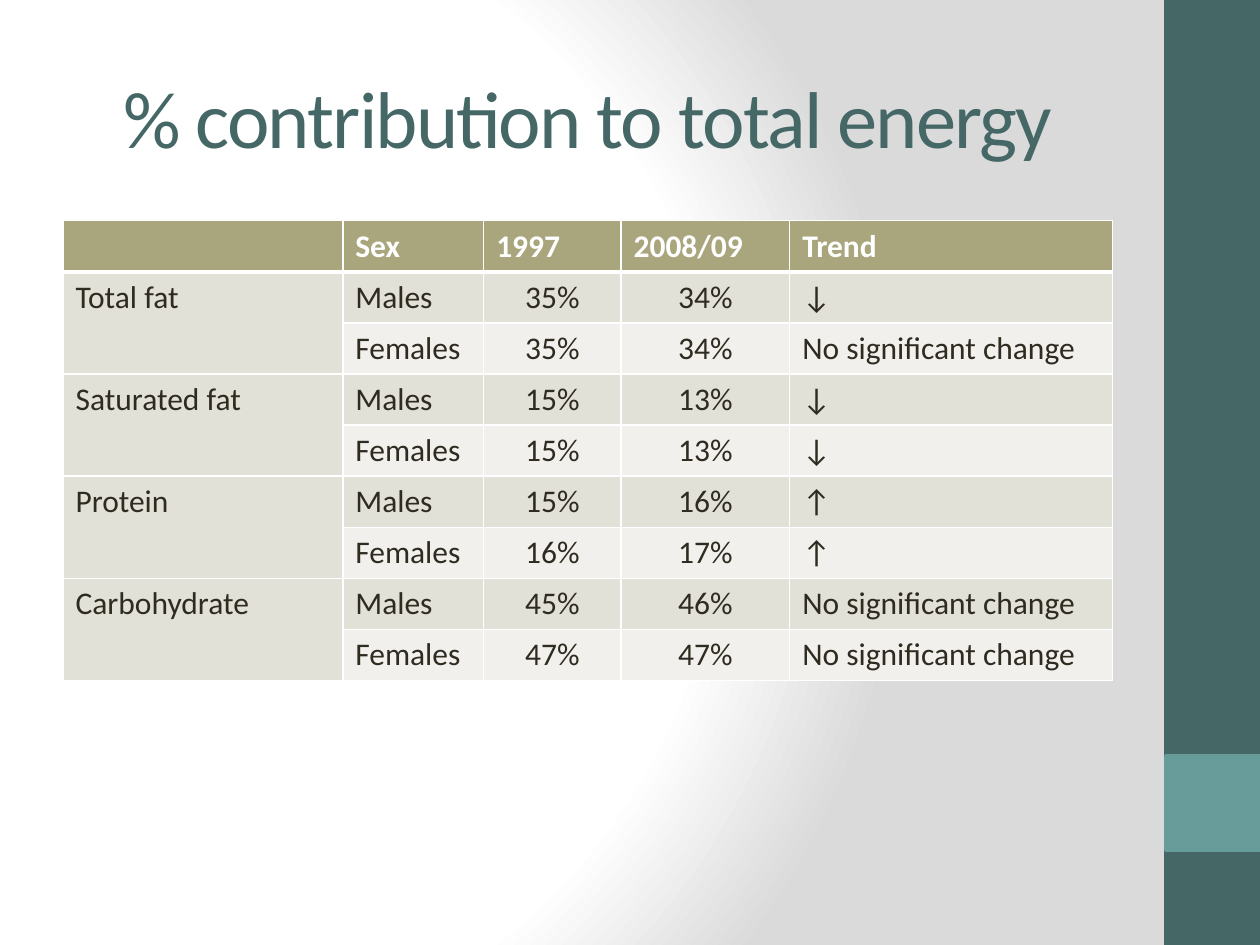
from dataclasses import dataclass

from pptx import Presentation
from pptx.dml.color import RGBColor
from pptx.enum.shapes import MSO_SHAPE
from pptx.enum.text import MSO_ANCHOR, PP_ALIGN
from pptx.oxml import parse_xml
from pptx.oxml.ns import nsdecls, qn
from pptx.slide import Slide
from pptx.table import _Cell as Cell
from pptx.text.text import TextFrame
from pptx.util import Cm, Pt


@dataclass(frozen=True)
class Theme:
    font: str = "Calibri"
    white: str = "FFFFFF"
    grey: str = "DADADA"
    teal: str = "456867"
    light: str = "689C9A"
    head: str = "A9A57C"
    odd: str = "E2E1D7"
    even: str = "F1F0EC"
    ink: str = "2F2B20"
    title: int = 46
    body: int = 18


@dataclass(frozen=True)
class Bar:
    top: float
    height: float
    color: str


@dataclass(frozen=True)
class Entry:
    sex: str
    first: str
    last: str
    trend: str


THEME = Theme()
BARS = [Bar(0, 19.05, THEME.teal), Bar(15.24, 1.9, THEME.light)]
HEADS = ["", "Sex", "1997", "2008/09", "Trend"]
WIDTHS = [5.64, 2.84, 2.77, 3.4, 6.51]
ROW = 1.03
SAME = "No significant change"
GROUPS = {
    "Total fat": [Entry("Males", "35%", "34%", "↓"),
                  Entry("Females", "35%", "34%", SAME)],
    "Saturated fat": [Entry("Males", "15%", "13%", "↓"),
                      Entry("Females", "15%", "13%", "↓")],
    "Protein": [Entry("Males", "15%", "16%", "↑"),
                Entry("Females", "16%", "17%", "↑")],
    "Carbohydrate": [Entry("Males", "45%", "46%", SAME),
                     Entry("Females", "47%", "47%", SAME)],
}


def write(frame: TextFrame, text: str, *, size: int = THEME.body,
          color: str = THEME.ink, bold: bool = False,
          align: PP_ALIGN = PP_ALIGN.LEFT, space: int = 0) -> None:
    para = frame.paragraphs[0]
    para.alignment = align
    run = para.add_run()
    run.text = text
    font = run.font
    font.name, font.size, font.bold = THEME.font, Pt(size), bold
    font.color.rgb = RGBColor.from_string(color)
    if space:
        run._r.get_or_add_rPr().set("spc", str(space * 100))


def paint(slide: Slide) -> None:
    """Fill the background with a round gradient."""
    slide.background.fill.solid()
    flat = slide.element.find(".//" + qn("p:bgPr")).find(qn("a:solidFill"))
    stops = [(0, THEME.white), (75, THEME.white), (100, THEME.grey)]
    marks = "".join(f'<a:gs pos="{pos * 1000}"><a:srgbClr val="{color}"/></a:gs>'
                    for pos, color in stops)
    flat.getparent().replace(flat, parse_xml(
        f'<a:gradFill rotWithShape="1" {nsdecls("a")}><a:gsLst>{marks}</a:gsLst>'
        '<a:path path="circle"><a:fillToRect l="20000" t="50000" r="100000" '
        'b="50000"/></a:path></a:gradFill>'))


def draw_bar(slide: Slide, bar: Bar) -> None:
    shape = slide.shapes.add_shape(MSO_SHAPE.RECTANGLE, Cm(23.5), Cm(bar.top),
                                   Cm(1.9), Cm(bar.height))
    shape.shadow.inherit = False
    shape.fill.solid()
    shape.fill.fore_color.rgb = RGBColor.from_string(bar.color)
    shape.line.color.rgb = RGBColor.from_string(bar.color)
    shape.line.width = Pt(2)


def dress(cell: Cell, fill: str, top: int = 1, low: int = 1) -> None:
    """Give a cell its fill and white borders, with widths in points."""
    cell.fill.solid()
    cell.fill.fore_color.rgb = RGBColor.from_string(fill)
    props = cell._tc.get_or_add_tcPr()
    sides = {"lnL": 1, "lnR": 1, "lnT": top, "lnB": low}
    for spot, (side, width) in enumerate(sides.items()):
        props.insert(spot, parse_xml(
            f'<a:{side} w="{Pt(width)}" {nsdecls("a")}><a:solidFill>'
            f'<a:srgbClr val="{THEME.white}"/></a:solidFill></a:{side}>'))


def draw_table(slide: Slide) -> None:
    count = 1 + sum(len(group) for group in GROUPS.values())
    table = slide.shapes.add_table(count, len(HEADS), Cm(1.27), Cm(4.45),
                                   Cm(sum(WIDTHS)), Cm(ROW * count)).table
    for col, width in zip(table.columns, WIDTHS):
        col.width = Cm(width)
    for row in table.rows:
        row.height = Cm(ROW)

    # Header
    for col, head in enumerate(HEADS):
        cell = table.cell(0, col)
        dress(cell, THEME.head, low=3)
        write(cell.text_frame, head, color=THEME.white, bold=True)

    # Nutrient groups
    row = 1
    for name, group in GROUPS.items():
        label = table.cell(row, 0)
        label.merge(table.cell(row + len(group) - 1, 0))
        write(label.text_frame, name)
        for entry in group:
            fill = THEME.odd if row % 2 else THEME.even
            top = 3 if row == 1 else 1
            dress(table.cell(row, 0), THEME.odd, top)
            texts = [entry.sex, entry.first, entry.last, entry.trend]
            for col, text in enumerate(texts, 1):
                cell = table.cell(row, col)
                dress(cell, fill, top)
                write(cell.text_frame, text,
                      align=PP_ALIGN.CENTER if col in (2, 3) else PP_ALIGN.LEFT)
            row += 1


def main() -> None:
    deck = Presentation()
    deck.slide_width, deck.slide_height = Cm(25.4), Cm(19.05)
    slide = deck.slides.add_slide(deck.slide_layouts[6])

    # Background and side bars
    paint(slide)
    for bar in BARS:
        draw_bar(slide, bar)

    # Title
    frame = slide.shapes.add_textbox(Cm(1.27), Cm(0.76), Cm(21.16),
                                     Cm(3.18)).text_frame
    frame.word_wrap = True
    frame.vertical_anchor = MSO_ANCHOR.MIDDLE
    write(frame, "% contribution to total energy", size=THEME.title,
          color=THEME.teal, align=PP_ALIGN.CENTER, space=-1)

    # Data
    draw_table(slide)
    deck.save("out.pptx")


if __name__ == "__main__":
    main()
